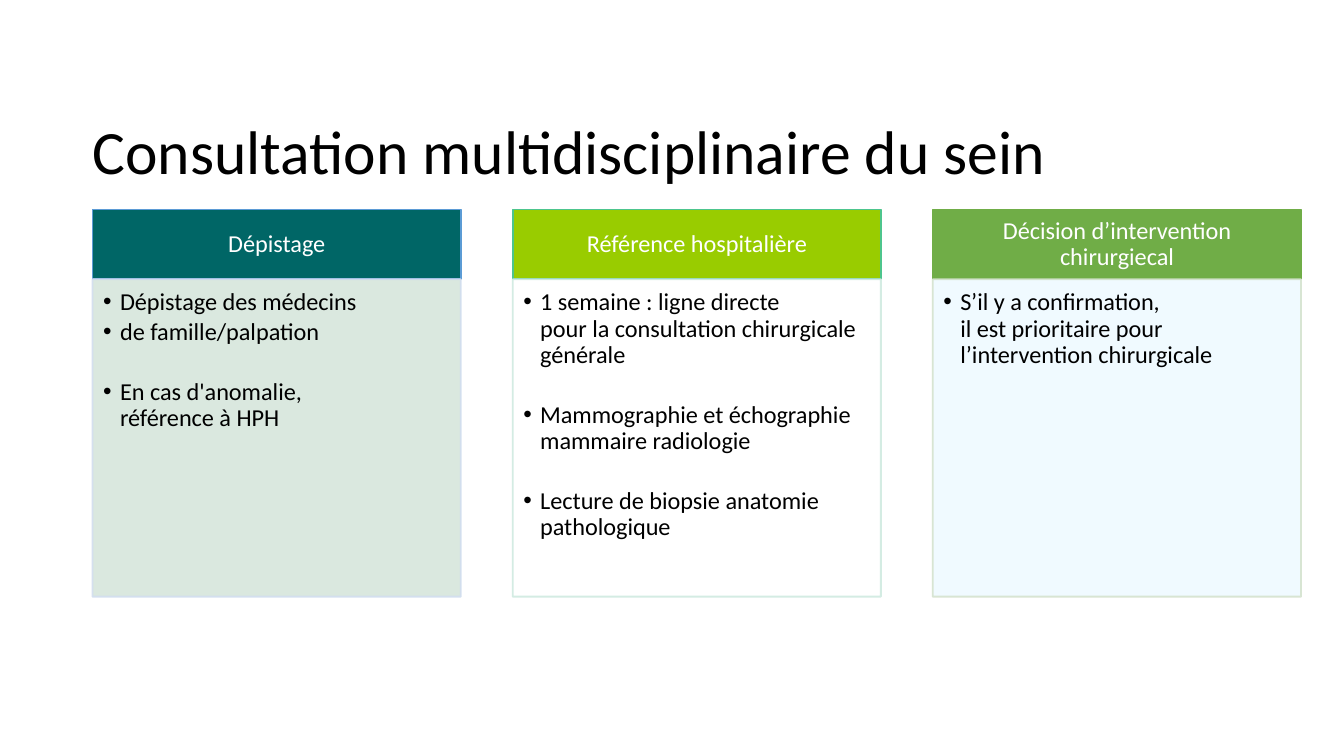
"""Build the slide on the multidisciplinary breast consultation."""
from lxml.etree import SubElement
from pptx import Presentation
from pptx.dml.color import RGBColor
from pptx.enum.shapes import MSO_SHAPE
from pptx.enum.text import MSO_ANCHOR, PP_ALIGN
from pptx.oxml.ns import qn
from pptx.util import Cm, Pt


def color(hex_code):
    return RGBColor.from_string(hex_code)


def write(box, paragraphs, size=13, ink="000000", align=PP_ALIGN.LEFT, anchor=MSO_ANCHOR.TOP,
          margins=(0, 0, 0, 0), spacing=0.9, bullet=False, after=0):
    frame = box.text_frame
    frame.word_wrap = True
    frame.vertical_anchor = anchor
    (frame.margin_left, frame.margin_top,
     frame.margin_right, frame.margin_bottom) = [Cm(margin) for margin in margins]
    for index, (text, before) in enumerate(paragraphs):
        paragraph = frame.add_paragraph() if index else frame.paragraphs[0]
        paragraph.text = text
        if bullet:
            properties = paragraph._p.get_or_add_pPr()
            properties.set("marL", str(Cm(0.32)))
            properties.set("indent", str(-Cm(0.32)))
            SubElement(properties, qn("a:buFont"), typeface="Arial")
            SubElement(properties, qn("a:buChar"), char="•")
        paragraph.alignment = align
        paragraph.line_spacing = spacing
        paragraph.space_before = Pt(before)
        paragraph.space_after = Pt(after)
        for run in paragraph.runs:
            run.font.name = "Calibri"
            run.font.size = Pt(size)
            run.font.color.rgb = color(ink)
        for line_break in paragraph._p.findall(qn("a:br")):
            SubElement(line_break, qn("a:rPr"), sz=str(size * 100))


deck = Presentation()
deck.slide_width, deck.slide_height = Cm(25.4), Cm(14.29)
slide = deck.slides.add_slide(deck.slide_layouts[6])

LEFT, WIDTH, PITCH = 1.75, 6.96, 7.94
HEADER_TOP, HEADER_HEIGHT, DETAIL_HEIGHT = 3.96, 1.32, 6
GAP = 16

title = slide.shapes.add_textbox(Cm(LEFT), Cm(0.76), Cm(21.9), Cm(2.77))
write(title, [("Consultation multidisciplinaire du sein", 0)], size=33,
      anchor=MSO_ANCHOR.BOTTOM, spacing=0.8)

steps = [
    ("Dépistage", "006666", "5B9BD5", "D6E6DC", "D2DEEF",
     [("Dépistage des médecins", 0),
      ("de famille/palpation", 0),
      ("En cas d'anomalie, \nréférence à HPH", GAP)]),
    ("Référence hospitalière", "99CC00", "4DC58D", "FFFFFF", "D0EAE1",
     [("1 semaine : ligne directe \npour la consultation chirurgicale générale", 0),
      ("Mammographie et échographie mammaire radiologie", GAP),
      ("Lecture de biopsie anatomie pathologique", GAP)]),
    ("Décision d’intervention chirurgiecal", "70AD47", "70AD47", "EFFAFF", "D5E3CF",
     [("S’il y a confirmation, \nil est prioritaire pour l’intervention chirurgicale", 0)]),
]

for column, (heading, header_fill, header_line, detail_fill, detail_line, points) in enumerate(steps):
    left = Cm(LEFT + column * PITCH)
    header = slide.shapes.add_shape(
        MSO_SHAPE.RECTANGLE, left, Cm(HEADER_TOP), Cm(WIDTH), Cm(HEADER_HEIGHT))
    details = slide.shapes.add_shape(
        MSO_SHAPE.RECTANGLE, left, Cm(HEADER_TOP + HEADER_HEIGHT), Cm(WIDTH), Cm(DETAIL_HEIGHT))
    for part, fill, line in ((header, header_fill, header_line), (details, detail_fill, detail_line)):
        part.shadow.inherit = False
        part.fill.solid()
        part.fill.fore_color.rgb = color(fill)
        part.line.color.rgb = color(line)
        part.line.width = Pt(1)
    for tint in details._element.spPr.iter(qn("a:srgbClr")):
        SubElement(tint, qn("a:alpha"), val="90000")
    write(header, [(heading, 0)], ink="FFFFFF", align=PP_ALIGN.CENTER,
          anchor=MSO_ANCHOR.MIDDLE, margins=(0.25, 0.15, 0.25, 0.15))
    write(details, points, margins=(0.2, 0.2, 0.25, 0.28), bullet=True, after=2)

deck.save("out.pptx")
